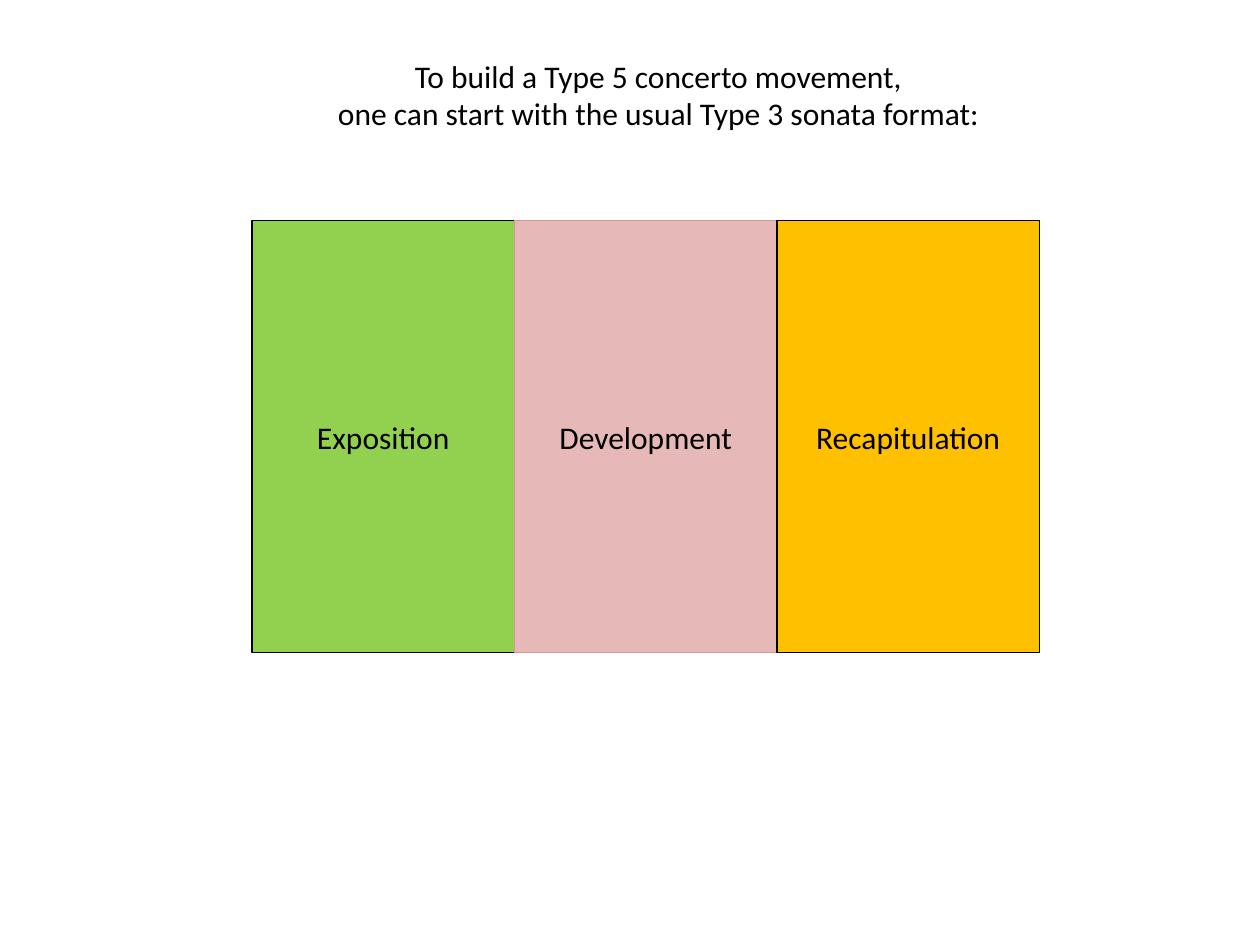
from dataclasses import dataclass

from pptx import Presentation
from pptx.dml.color import RGBColor
from pptx.enum.shapes import MSO_SHAPE
from pptx.enum.text import MSO_ANCHOR, PP_ALIGN
from pptx.util import Inches, Pt

RECTANGLE = MSO_SHAPE.RECTANGLE
MIDDLE = MSO_ANCHOR.MIDDLE
TOP = MSO_ANCHOR.TOP
CENTER = PP_ALIGN.CENTER
BLANK_LAYOUT = 6


@dataclass(frozen=True)
class Theme:
    font: str = "Calibri"
    text_size: Pt = Pt(18)
    line_width: Pt = Pt(0.75)
    black: RGBColor = RGBColor(0x00, 0x00, 0x00)
    green: RGBColor = RGBColor(0x92, 0xD0, 0x50)
    pink: RGBColor = RGBColor(0xE6, 0xB9, 0xB8)
    rose: RGBColor = RGBColor(0xD9, 0x96, 0x94)
    gold: RGBColor = RGBColor(0xFF, 0xC0, 0x00)


THEME = Theme()

TITLE_LINES = (
    "To build a Type 5 concerto movement, ",
    "one can start with the usual Type 3 sonata format: ",
)
SECTIONS = (
    ("Exposition", THEME.green, THEME.black),
    ("Development", THEME.pink, THEME.rose),
    ("Recapitulation", THEME.gold, THEME.black),
)


def write_lines(text_frame, lines, anchor):
    """Fill the frame with one centred paragraph per line."""
    text_frame.word_wrap = True
    text_frame.vertical_anchor = anchor
    font_format = {"name": THEME.font, "size": THEME.text_size}
    for index, line in enumerate(lines):
        paragraph = text_frame.add_paragraph() if index else text_frame.paragraphs[0]
        paragraph.alignment = CENTER
        run = paragraph.add_run()
        run.text = line
        for name, value in font_format.items():
            setattr(run.font, name, value)
        run.font.color.rgb = THEME.black


def add_title(slide, left, top, width, height):
    text_box = slide.shapes.add_textbox(left, top, width, height)
    write_lines(text_box.text_frame, TITLE_LINES, TOP)


def add_sonata_form(slide, left, top, width, height):
    """Split the box into equal, touching columns, one per section."""
    column_width = width / len(SECTIONS)
    for index, (label, fill_color, line_color) in enumerate(SECTIONS):
        shape = slide.shapes.add_shape(
            RECTANGLE, round(left + index * column_width), top, round(column_width), height
        )
        shape.shadow.inherit = False
        shape.fill.solid()
        shape.fill.fore_color.rgb = fill_color
        shape.line.color.rgb = line_color
        shape.line.width = THEME.line_width
        write_lines(shape.text_frame, [label], MIDDLE)


def main():
    presentation = Presentation()
    presentation.slide_width = Inches(10)
    presentation.slide_height = Inches(7.5)
    slide = presentation.slides.add_slide(presentation.slide_layouts[BLANK_LAYOUT])
    add_sonata_form(slide, Inches(2), Inches(1.75), Inches(6.25), Inches(3.43))
    add_title(slide, Inches(2.42), Inches(0.4), Inches(5.67), Inches(0.71))
    presentation.save("out.pptx")


if __name__ == "__main__":
    main()
